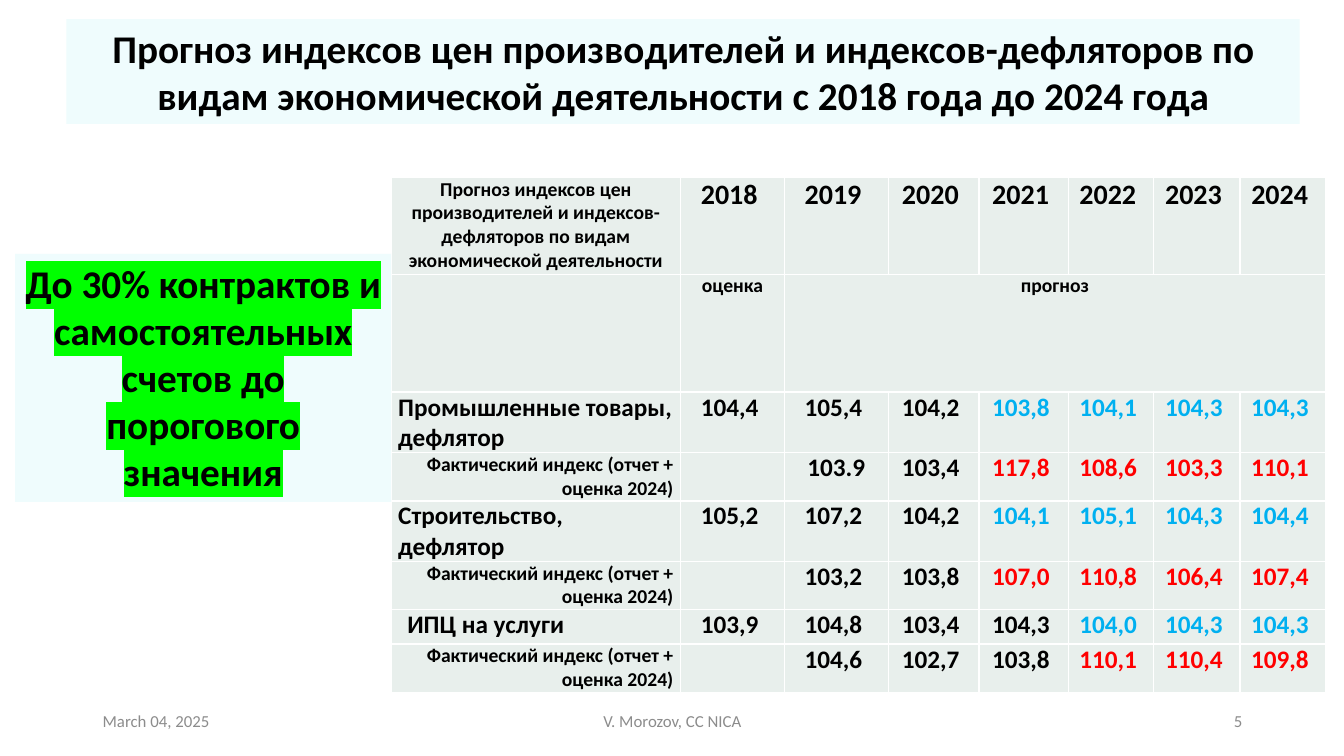
"""Build the slide with the 2018-2024 price index and deflator forecast table."""
import dataclasses
import typing

import lxml.etree
import pptx
import pptx.dml.color
import pptx.enum.shapes
import pptx.enum.text
import pptx.oxml.ns
import pptx.slide
import pptx.table
import pptx.text.text
import pptx.util

Inches = pptx.util.Inches
Align = pptx.enum.text.PP_ALIGN
Anchor = pptx.enum.text.MSO_ANCHOR
qn = pptx.oxml.ns.qn

COLORS = {
    "black": "000000",
    "grey": "8C8C8C",
    "panel": "EFFCFD",
    "cell": "E8EFEC",
    "border": "FFFFFF",
    "highlight": "00FF00",
    "forecast": "00B0F0",
    "actual": "FF0000",
}


@dataclasses.dataclass(frozen=True)
class Box:
    left: float
    top: float
    width: float
    height: float
    text: str
    align: Align = Align.CENTER
    highlight: typing.Optional[str] = None


@dataclasses.dataclass(frozen=True)
class IndexRow:
    label: str
    values: tuple[str, ...]
    height: float
    accent: str
    accent_from: int = 2021
    label_size: int = 18
    label_align: Align = Align.LEFT
    label_margin: float = 0.07


def actual_row(*values: str, accent_from: int = 2021) -> IndexRow:
    return IndexRow("Фактический индекс (отчет + оценка 2024)", values, 0.48, "actual",
                    accent_from, 14, Align.RIGHT)


PANELS = (
    Box(0.66, 0.19, 12.23, 1.04,
        "Прогноз индексов цен производителей и индексов-дефляторов по видам "
        "экономической деятельноcти с 2018 года до 2024 года"),
    Box(0.15, 2.52, 3.73, 2.46,
        "До 30% контрактов и самостоятельных счетов до порогового значения",
        highlight="highlight"),
)
FOOTERS = (
    Box(0.92, 6.95, 3, 0.4, "March 04, 2025", Align.LEFT),
    Box(4.42, 6.95, 4.5, 0.4, "V. Morozov, CC NICA"),
    Box(9.42, 6.95, 3, 0.4, "5", Align.RIGHT),
)
TABLE_TITLE = ("Прогноз индексов цен производителей и индексов-дефляторов по видам "
               "экономической деятельноcти")
YEARS = range(2018, 2025)
COLUMN_WIDTHS = (2.87, 1.03, 1.03, 0.9, 0.89, 0.84, 0.86, 0.85)
HEADER_HEIGHTS = (0.96, 1.17)
INDEX_ROWS = (
    IndexRow("Промышленные товары, дефлятор",
             ("104,4 ", "105,4 ", "104,2 ", "103,8 ", "104,1 ", "104,3 ", "104,3 "),
             0.6, "forecast"),
    actual_row("", "103.9", "103,4 ", "117,8 ", "108,6 ", "103,3 ", "110,1 "),
    IndexRow("Строительство, дефлятор",
             ("105,2 ", "107,2 ", "104,2 ", "104,1 ", "105,1 ", "104,3 ", "104,4 "),
             0.6, "forecast"),
    actual_row("", "103,2 ", "103,8 ", "107,0 ", "110,8 ", "106,4 ", "107,4 "),
    IndexRow("ИПЦ на услуги",
             ("103,9 ", "104,8 ", "103,4 ", "104,3 ", "104,0 ", "104,3 ", "104,3 "),
             0.34, "forecast", 2022, label_margin=0.16),
    actual_row("", "104,6 ", "102,7 ", "103,8 ", "110,1 ", "110,4 ", "109,8 ",
               accent_from=2022),
)


def rgb(name: str) -> pptx.dml.color.RGBColor:
    return pptx.dml.color.RGBColor.from_string(COLORS[name])


def write_text(tf: pptx.text.text.TextFrame, text: str, *, size: float = 18,
               color: str = "black", bold: bool = True, align: Align = Align.CENTER,
               highlight: typing.Optional[str] = None) -> None:
    p = tf.paragraphs[0]
    p.alignment = align
    r = p.add_run()
    r.text = text
    r.font.size = pptx.util.Pt(size)
    r.font.bold = bold
    r.font.color.rgb = rgb(color)
    r.font.name = "Calibri"
    if highlight:
        mark = lxml.etree.Element(qn("a:highlight"))
        lxml.etree.SubElement(mark, qn("a:srgbClr"), val=COLORS[highlight])
        r.font._element.find(qn("a:solidFill")).addnext(mark)


def add_panel(s: pptx.slide.Slide, box: Box) -> None:
    sp = s.shapes.add_shape(pptx.enum.shapes.MSO_SHAPE.RECTANGLE, Inches(box.left),
                            Inches(box.top), Inches(box.width), Inches(box.height))
    sp.shadow.inherit = False
    sp.fill.solid()
    sp.fill.fore_color.rgb = rgb("panel")
    sp.line.fill.background()
    tf = sp.text_frame
    tf.word_wrap = True
    tf.vertical_anchor = Anchor.TOP
    tf.auto_size = pptx.enum.text.MSO_AUTO_SIZE.SHAPE_TO_FIT_TEXT
    write_text(tf, box.text, size=28, align=box.align, highlight=box.highlight)


def add_footer(s: pptx.slide.Slide, box: Box) -> None:
    tf = s.shapes.add_textbox(Inches(box.left), Inches(box.top), Inches(box.width),
                              Inches(box.height)).text_frame
    tf.word_wrap = True
    tf.vertical_anchor = Anchor.MIDDLE
    write_text(tf, box.text, size=12, color="grey", bold=False, align=box.align)


def style_cell(cell: pptx.table._Cell) -> None:
    cell.margin_left = cell.margin_right = Inches(0.07)
    cell.margin_top = cell.margin_bottom = 0
    tc_pr = cell._tc.get_or_add_tcPr()
    for side in ("lnL", "lnR", "lnT", "lnB"):
        ln = lxml.etree.SubElement(tc_pr, qn(f"a:{side}"), w=str(pptx.util.Pt(1)))
        fill = lxml.etree.SubElement(ln, qn("a:solidFill"))
        lxml.etree.SubElement(fill, qn("a:srgbClr"), val=COLORS["border"])
    cell.fill.solid()
    cell.fill.fore_color.rgb = rgb("cell")


def add_index_table(s: pptx.slide.Slide) -> None:
    heights = (*HEADER_HEIGHTS, *(row.height for row in INDEX_ROWS))
    table = s.shapes.add_table(len(heights), len(COLUMN_WIDTHS), Inches(3.88), Inches(1.76),
                               Inches(sum(COLUMN_WIDTHS)), Inches(sum(heights))).table
    table.first_row = table.horz_banding = False
    for column, width in zip(table.columns, COLUMN_WIDTHS):
        column.width = Inches(width)
    for table_row, height in zip(table.rows, heights):
        table_row.height = Inches(height)
    for cell in table.iter_cells():
        style_cell(cell)

    write_text(table.cell(0, 0).text_frame, TABLE_TITLE, size=14)
    for c, year in enumerate(YEARS, 1):
        write_text(table.cell(0, c).text_frame, f"{year} ", size=20)
    write_text(table.cell(1, 1).text_frame, "оценка", size=14)
    table.cell(1, 2).merge(table.cell(1, len(YEARS)))
    write_text(table.cell(1, 2).text_frame, "прогноз", size=14)

    for r, row in enumerate(INDEX_ROWS, len(HEADER_HEIGHTS)):
        label = table.cell(r, 0)
        label.margin_left = Inches(row.label_margin)
        write_text(label.text_frame, row.label, size=row.label_size, align=row.label_align)
        for c, (year, value) in enumerate(zip(YEARS, row.values), 1):
            if value:
                color = row.accent if year >= row.accent_from else "black"
                write_text(table.cell(r, c).text_frame, value, color=color)


def main() -> None:
    prs = pptx.Presentation()
    prs.slide_width, prs.slide_height = Inches(13.33), Inches(7.5)
    s = prs.slides.add_slide(prs.slide_layouts[6])
    for footer in FOOTERS:
        add_footer(s, footer)
    add_index_table(s)
    for panel in PANELS:
        add_panel(s, panel)
    prs.save("out.pptx")


if __name__ == "__main__":
    main()
